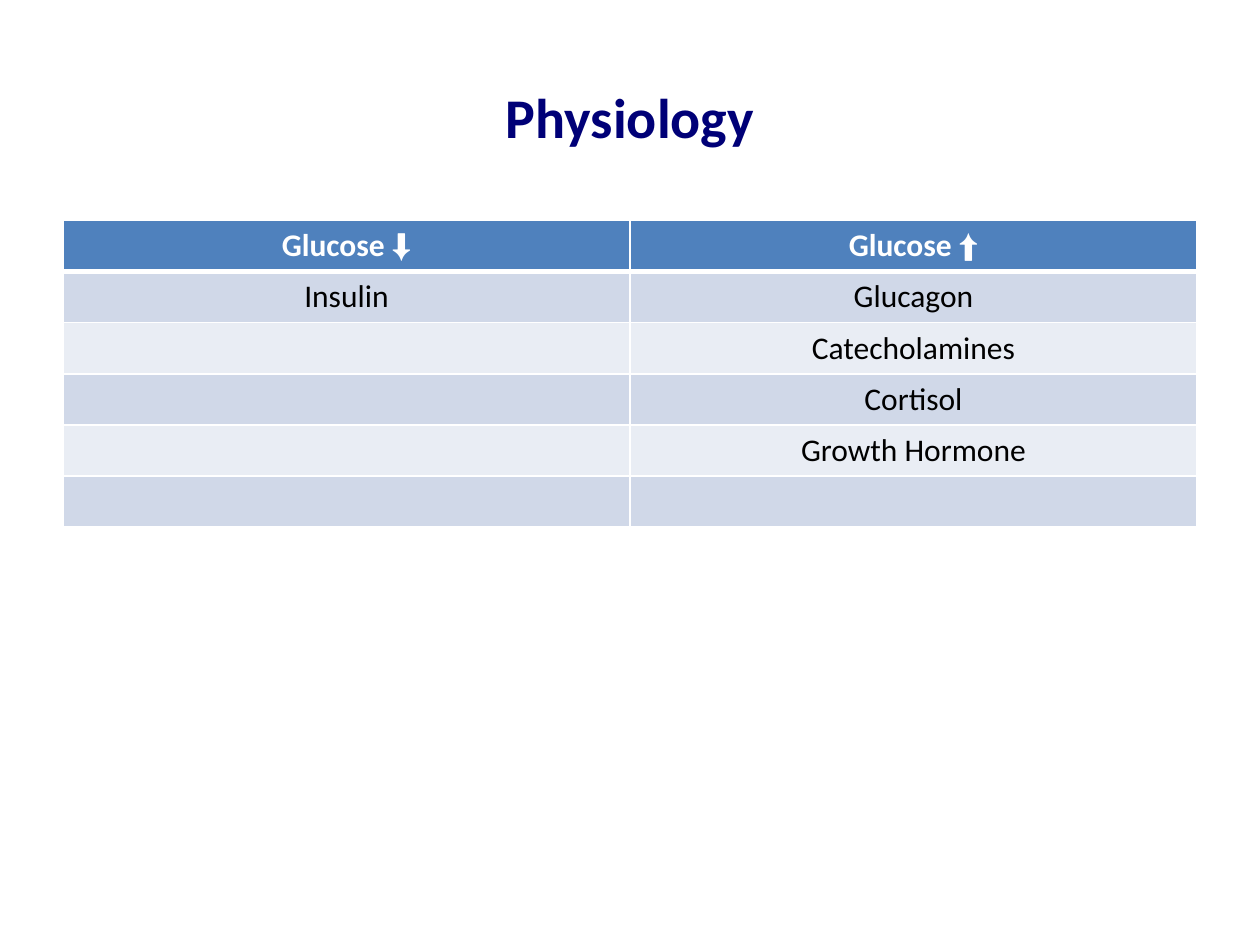
from lxml import etree
from pptx import Presentation
from pptx.dml.color import RGBColor
from pptx.enum import text
from pptx.oxml.ns import qn
from pptx.util import Pt


def add_run(p, content, size, color, bold=False, font="Calibri"):
    r = p.add_run()
    r.text = content
    r.font.name = font
    r.font.size = Pt(size)
    r.font.bold = bold
    r.font.color.rgb = RGBColor.from_string(color)


def set_borders(cell, color, **widths):
    """Draw the cell edges; widths maps L, R, T and B, in that order, to points."""
    tcPr = cell._tc.get_or_add_tcPr()
    for side, width in widths.items():
        ln = etree.SubElement(tcPr, qn(f"a:ln{side}"), w=str(Pt(width)))
        fill = etree.SubElement(ln, qn("a:solidFill"))
        etree.SubElement(fill, qn("a:srgbClr"), val=color)


prs = Presentation()
prs.slide_width, prs.slide_height = Pt(720), Pt(540)
s = prs.slides.add_slide(prs.slide_layouts[6])

# Title
title = s.shapes.add_textbox(Pt(36), Pt(21.6), Pt(648), Pt(90))
tf = title.text_frame
tf.word_wrap = True
tf.vertical_anchor = text.MSO_ANCHOR.MIDDLE
p = tf.paragraphs[0]
p.alignment = text.PP_ALIGN.CENTER
add_run(p, "Physiology", 32, "000077", bold=True)

# Hormone table
arrows = ["⬇", "⬆"]
hormones = [
    ("Insulin", "Glucagon"),
    ("", "Catecholamines"),
    ("", "Cortisol"),
    ("", "Growth Hormone"),
    ("", ""),
]
row_height = 29.2
n_rows = len(hormones) + 1
table = s.shapes.add_table(n_rows, 2, Pt(36), Pt(126), Pt(648),
                           Pt(row_height * n_rows)).table
for row in table.rows:
    row.height = Pt(row_height)

for i in range(n_rows):
    for j, arrow in enumerate(arrows):
        cell = table.cell(i, j)
        set_borders(cell, "FFFFFF", L=1, R=1, T=3 if i == 1 else 1, B=3 if i == 0 else 1)
        cell.fill.solid()
        band = "4F81BD" if i == 0 else "D0D8E8" if i % 2 else "E9EDF4"
        cell.fill.fore_color.rgb = RGBColor.from_string(band)
        cell.vertical_anchor = text.MSO_ANCHOR.MIDDLE
        p = cell.text_frame.paragraphs[0]
        p.alignment = text.PP_ALIGN.CENTER
        if i == 0:
            add_run(p, "Glucose ", 18, "FFFFFF", bold=True)
            add_run(p, arrow, 18, "FFFFFF", bold=True, font="Arial")
        elif hormones[i - 1][j]:
            add_run(p, hormones[i - 1][j], 18, "000000")

prs.save("out.pptx")
